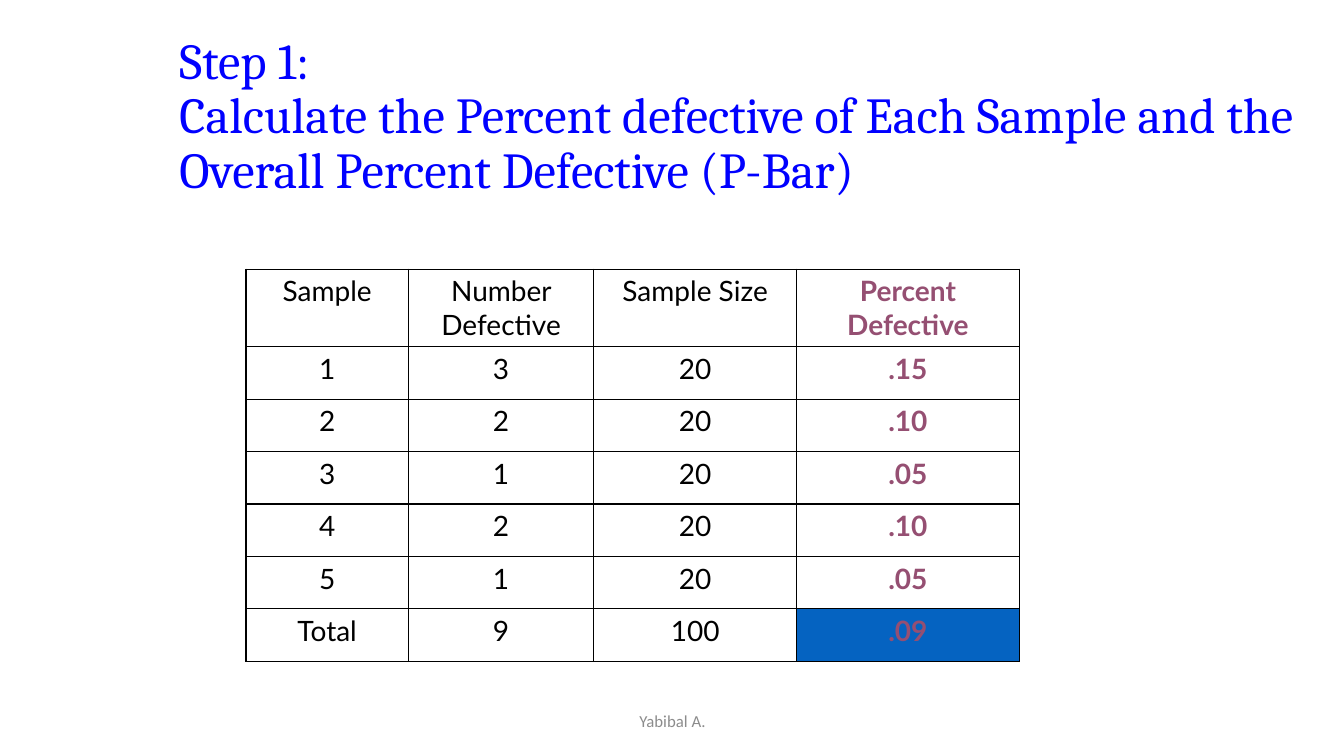
from lxml import etree
from pptx import Presentation
from pptx import util as u
from pptx.dml.color import RGBColor
from pptx.enum import text
from pptx.oxml import ns

COLORS = {
    "title": "0000FF",
    "body": "000000",
    "percent": "954F72",
    "highlight": "0563C1",
    "footer": "8C8C8C",
}

SAMPLES = [(1, 3, 20, ".15"), (2, 2, 20, ".10"), (3, 1, 20, ".05"),
           (4, 2, 20, ".10"), (5, 1, 20, ".05")]
ROWS = [
    ("Sample", "Number Defective", "Sample Size", "Percent Defective"),
    *SAMPLES,
    ("Total", 9, 100, ".09"),
]
COLUMN_WIDTHS = [1.61, 1.84, 2.01, 2.21]
HEADER_HEIGHT = 0.77
ROW_HEIGHT = 0.52


def write_text(frame, content, font, size, color, bold=False,
               align=text.PP_ALIGN.CENTER, spacing=None):
    paragraph = frame.paragraphs[0]
    paragraph.text = content
    paragraph.alignment = align
    paragraph.line_spacing = spacing
    paragraph.space_before = u.Pt(0)
    for run in paragraph.runs:
        run.font.name = font
        run.font.size = u.Pt(size)
        run.font.bold = bold
        run.font.color.rgb = RGBColor.from_string(COLORS[color])


class SlideBuilder:
    title_font = "Cambria"
    table_font = "Lato"
    footer_font = "Calibri"

    def __init__(self, presentation):
        self.slide = presentation.slides.add_slide(presentation.slide_layouts[5])

    def title(self, content, left, top, width, height):
        shape = self.slide.shapes.title
        shape.left, shape.top = u.Inches(left), u.Inches(top)
        shape.width, shape.height = u.Inches(width), u.Inches(height)
        frame = shape.text_frame
        frame.word_wrap = True
        frame.auto_size = text.MSO_AUTO_SIZE.NONE
        frame.vertical_anchor = text.MSO_ANCHOR.MIDDLE
        write_text(frame, content, self.title_font, 36, "title",
                   align=text.PP_ALIGN.LEFT, spacing=0.9)

    def footer(self, content, left, top, width, height):
        shape = self.slide.shapes.add_textbox(
            u.Inches(left), u.Inches(top), u.Inches(width), u.Inches(height))
        frame = shape.text_frame
        frame.word_wrap = True
        frame.vertical_anchor = text.MSO_ANCHOR.MIDDLE
        write_text(frame, content, self.footer_font, 12, "footer")

    def border(self, cell):
        properties = cell._tc.get_or_add_tcPr()
        for position, side in enumerate(("lnL", "lnR", "lnT", "lnB")):
            line = etree.Element(ns.qn(f"a:{side}"), w=str(u.Pt(1)))
            fill = etree.SubElement(line, ns.qn("a:solidFill"))
            etree.SubElement(fill, ns.qn("a:srgbClr"), val=COLORS["body"])
            properties.insert(position, line)

    def cell(self, cell, content, is_percent, is_highlighted):
        cell.margin_left = cell.margin_right = u.Inches(0.13)
        cell.margin_top = cell.margin_bottom = u.Inches(0.05)
        cell.vertical_anchor = text.MSO_ANCHOR.TOP
        if is_highlighted:
            cell.fill.solid()
            cell.fill.fore_color.rgb = RGBColor.from_string(COLORS["highlight"])
        else:
            cell.fill.background()
        self.border(cell)
        write_text(cell.text_frame, content, self.table_font, 20,
                   "percent" if is_percent else "body", bold=is_percent)

    def table(self, rows, left, top):
        heights = [HEADER_HEIGHT] + [ROW_HEIGHT] * (len(rows) - 1)
        table = self.slide.shapes.add_table(
            len(rows), len(COLUMN_WIDTHS), u.Inches(left), u.Inches(top),
            u.Inches(sum(COLUMN_WIDTHS)), u.Inches(sum(heights))).table
        table.first_row = table.horz_banding = False
        for column, width in zip(table.columns, COLUMN_WIDTHS):
            column.width = u.Inches(width)
        for row, height in zip(table.rows, heights):
            row.height = u.Inches(height)
        for row_index, values in enumerate(rows):
            for column_index, value in enumerate(values):
                is_percent = column_index == len(values) - 1
                is_total = row_index == len(rows) - 1
                self.cell(table.cell(row_index, column_index), str(value),
                          is_percent, is_percent and is_total)


def main():
    presentation = Presentation()
    presentation.slide_width = u.Inches(13.33)
    presentation.slide_height = u.Inches(7.5)
    builder = SlideBuilder(presentation)
    builder.title("Step 1:\vCalculate the Percent defective of Each Sample and the "
                  "Overall Percent Defective (P-Bar)", 1.68, 0.5, 11.36, 1.33)
    builder.table(ROWS, 2.44, 2.67)
    builder.footer("Yabibal A.", 4.42, 6.95, 4.5, 0.4)
    presentation.save("out.pptx")


if __name__ == "__main__":
    main()
